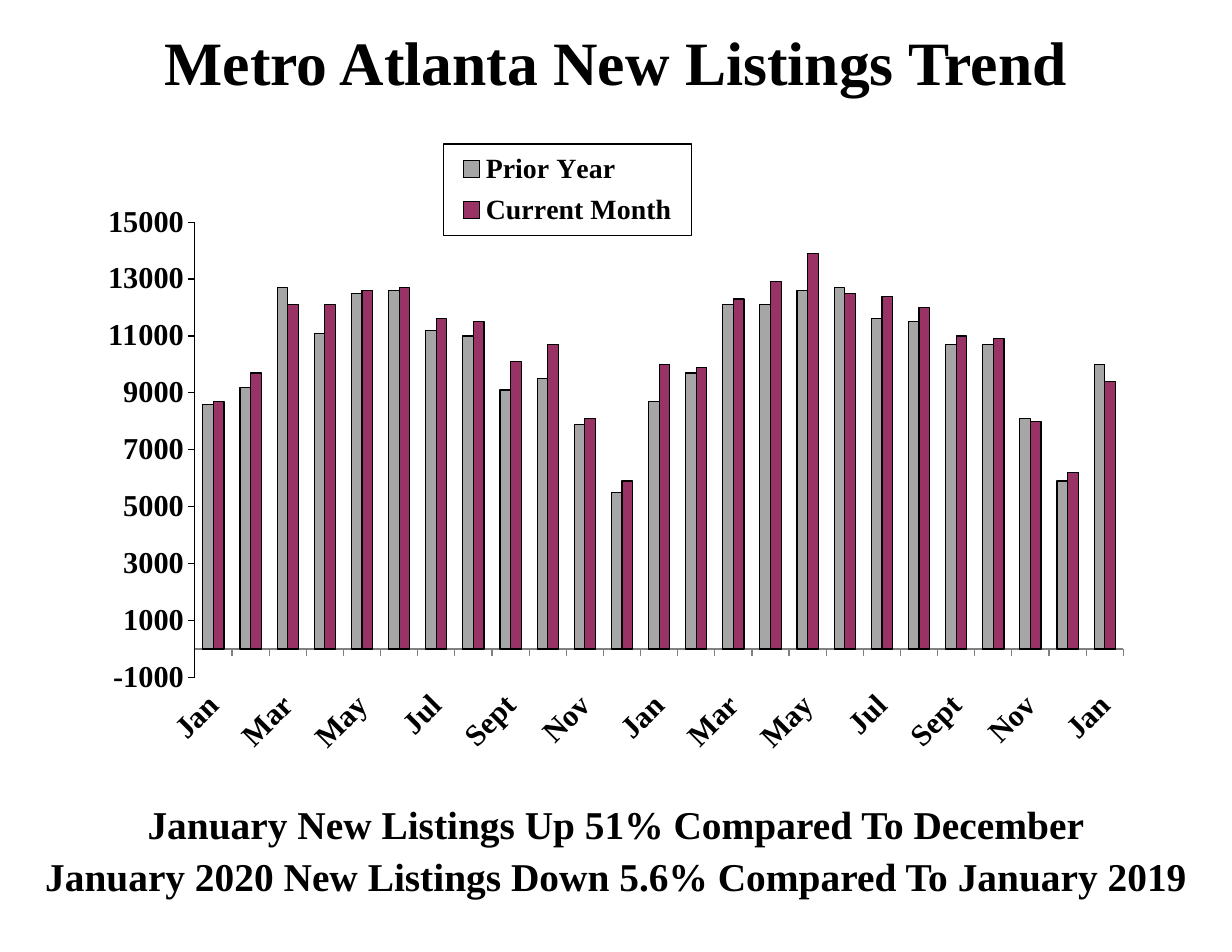
from dataclasses import dataclass

from pptx import Presentation, util as u
from pptx.chart.data import CategoryChartData
from pptx.dml.color import RGBColor
from pptx.enum import chart as ch, text as t
from pptx.oxml import parse_xml
from pptx.oxml.ns import nsdecls, qn


@dataclass(frozen=True)
class Theme:
    font: str = "Times New Roman"
    ink: str = "000000"
    paper: str = "FFFFFF"
    axis: str = "808080"
    prior: str = "A6A6A6"
    current: str = "993366"
    title: float = 39.6
    body: float = 25.3
    label: float = 19.5
    legend: float = 17.9
    hairline: float = 0.75


MONTHS = "Jan Feb Mar Apr May Jun Jul Aug Sept Oct Nov Dec".split()
CATEGORIES = MONTHS * 2 + MONTHS[:1]
PRIOR = [8600, 9200, 12700, 11100, 12500, 12600, 11200, 11000, 9100, 9500, 7900, 5500,
         8700, 9700, 12100, 12100, 12600, 12700, 11600, 11500, 10700, 10700, 8100, 5900,
         10000]
CURRENT = [8700, 9700, 12100, 12100, 12600, 12700, 11600, 11500, 10100, 10700, 8100, 5900,
           10000, 9900, 12300, 12900, 13900, 12500, 12400, 12000, 11000, 10900, 8000, 6200,
           9400]


def style_font(font, theme, size):
    font.name, font.size, font.bold = theme.font, u.Pt(size), True
    font.color.rgb = RGBColor.from_string(theme.ink)


def write(p, content, theme, size, spacing=1.0, before=0):
    p.alignment = t.PP_ALIGN.CENTER
    p.line_spacing, p.space_before = spacing, u.Pt(before)
    r = p.add_run()
    r.text = content
    style_font(r.font, theme, size)


def manual_layout(x, y, w, h, inner=False):
    target = '<c:layoutTarget val="inner"/>' if inner else ""
    return parse_xml(
        f'<c:layout {nsdecls("c")}><c:manualLayout>{target}'
        '<c:xMode val="edge"/><c:yMode val="edge"/>'
        f'<c:x val="{x}"/><c:y val="{y}"/><c:w val="{w}"/><c:h val="{h}"/>'
        '</c:manualLayout></c:layout>')


class Deck:
    COLS, ROWS = 110, 85

    def __init__(self, theme):
        self.theme = theme
        self.prs = Presentation()
        self.prs.slide_width, self.prs.slide_height = u.Inches(11), u.Inches(8.5)
        self.s = self.prs.slides.add_slide(self.prs.slide_layouts[1])

    def box(self, col, row, cols, rows):
        dx = self.prs.slide_width / self.COLS
        dy = self.prs.slide_height / self.ROWS
        return [u.Emu(round(v)) for v in (col * dx, row * dy, cols * dx, rows * dy)]

    def place(self, sp, cell, anchor):
        sp.left, sp.top, sp.width, sp.height = self.box(*cell)
        tf = sp.text_frame
        tf.word_wrap, tf.auto_size = True, t.MSO_AUTO_SIZE.NONE
        tf.margin_left = tf.margin_right = tf.margin_top = tf.margin_bottom = 0
        tf.vertical_anchor = anchor
        return tf

    def title(self, content, cell):
        tf = self.place(self.s.shapes.title, cell, t.MSO_ANCHOR.MIDDLE)
        write(tf.paragraphs[0], content, self.theme, self.theme.title)

    def body(self, lines, cell):
        tf = self.place(self.s.placeholders[1], cell, t.MSO_ANCHOR.TOP)
        for i, line in enumerate(lines):
            p = tf.add_paragraph() if i else tf.paragraphs[0]
            pPr = p._p.get_or_add_pPr()
            pPr.set("marL", "0")
            pPr.set("indent", "0")
            pPr.append(parse_xml(f'<a:buNone {nsdecls("a")}/>'))
            write(p, line, self.theme, self.theme.body, 0.9, 6.5 if i else 0)

    def line(self, fmt, color):
        fmt.line.color.rgb = RGBColor.from_string(color)
        fmt.line.width = u.Pt(self.theme.hairline)

    def columns(self, categories, series, cell):
        data = CategoryChartData()
        data.categories = categories
        for name, values, _ in series:
            data.add_series(name, values)
        chart = self.s.shapes.add_chart(
            ch.XL_CHART_TYPE.COLUMN_CLUSTERED, *self.box(*cell), data).chart
        style_font(chart.font, self.theme, self.theme.label)
        chart.has_title = False
        plot = chart.plots[0]
        plot.gap_width, plot.overlap, plot.vary_by_categories = 150, 0, False
        for ser, (_, _, color) in zip(plot.series, series):
            ser.invert_if_negative = False
            ser.format.fill.solid()
            ser.format.fill.fore_color.rgb = RGBColor.from_string(color)
            self.line(ser.format, self.theme.ink)
        self.axes(chart)
        self.legend(chart)

    def axes(self, chart):
        val, cat = chart.value_axis, chart.category_axis
        val.minimum_scale, val.maximum_scale, val.major_unit = -1000, 15000, 2000
        for axis, color in ((val, self.theme.ink), (cat, self.theme.axis)):
            axis.has_major_gridlines = False
            axis.major_tick_mark = ch.XL_TICK_MARK.OUTSIDE
            axis.minor_tick_mark = ch.XL_TICK_MARK.NONE
            style_font(axis.tick_labels.font, self.theme, self.theme.label)
            self.line(axis.format, color)
        val.tick_labels.number_format = "0"
        val.tick_labels.number_format_is_linked = False
        cat.tick_label_position = ch.XL_TICK_LABEL_POSITION.LOW
        body = cat._element.find(qn("c:txPr")).find(qn("a:bodyPr"))
        body.set("rot", "-2700000")
        body.set("vert", "horz")
        skip = parse_xml(f'<c:tickLblSkip {nsdecls("c")} val="2"/>')
        cat._element.find(qn("c:noMultiLvlLbl")).addprevious(skip)
        area = chart._chartSpace.chart.plotArea
        for old in area.findall(qn("c:layout")):
            area.remove(old)
        area.insert(0, manual_layout(0.11, 0.14, 0.86, 0.7, inner=True))

    def legend(self, chart):
        chart.has_legend = True
        legend = chart.legend
        legend.position = ch.XL_LEGEND_POSITION.RIGHT
        legend.include_in_layout = False
        style_font(legend.font, self.theme, self.theme.legend)
        el = legend._element
        for old in el.findall(qn("c:layout")):
            el.remove(old)
        el.find(qn("c:legendPos")).addnext(manual_layout(0.34, 0.02, 0.23, 0.14))
        el.find(qn("c:txPr")).addprevious(parse_xml(
            f'<c:spPr {nsdecls("c", "a")}>'
            f'<a:solidFill><a:srgbClr val="{self.theme.paper}"/></a:solidFill>'
            f'<a:ln w="{u.Pt(self.theme.hairline)}"><a:solidFill>'
            f'<a:srgbClr val="{self.theme.ink}"/></a:solidFill></a:ln></c:spPr>'))


def main():
    theme = Theme()
    deck = Deck(theme)
    deck.title("Metro Atlanta New Listings Trend", (0, 3.1, 110, 4.6))
    deck.columns(CATEGORIES, [("Prior Year", PRIOR, theme.prior),
                              ("Current Month", CURRENT, theme.current)],
                 (6.8, 11.7, 96.4, 58.1))
    deck.body(["January New Listings Up 51% Compared To December",
               "January 2020 New Listings Down 5.6% Compared To January 2019"],
              (0, 71.9, 110, 9))
    deck.prs.save("out.pptx")


if __name__ == "__main__":
    main()
